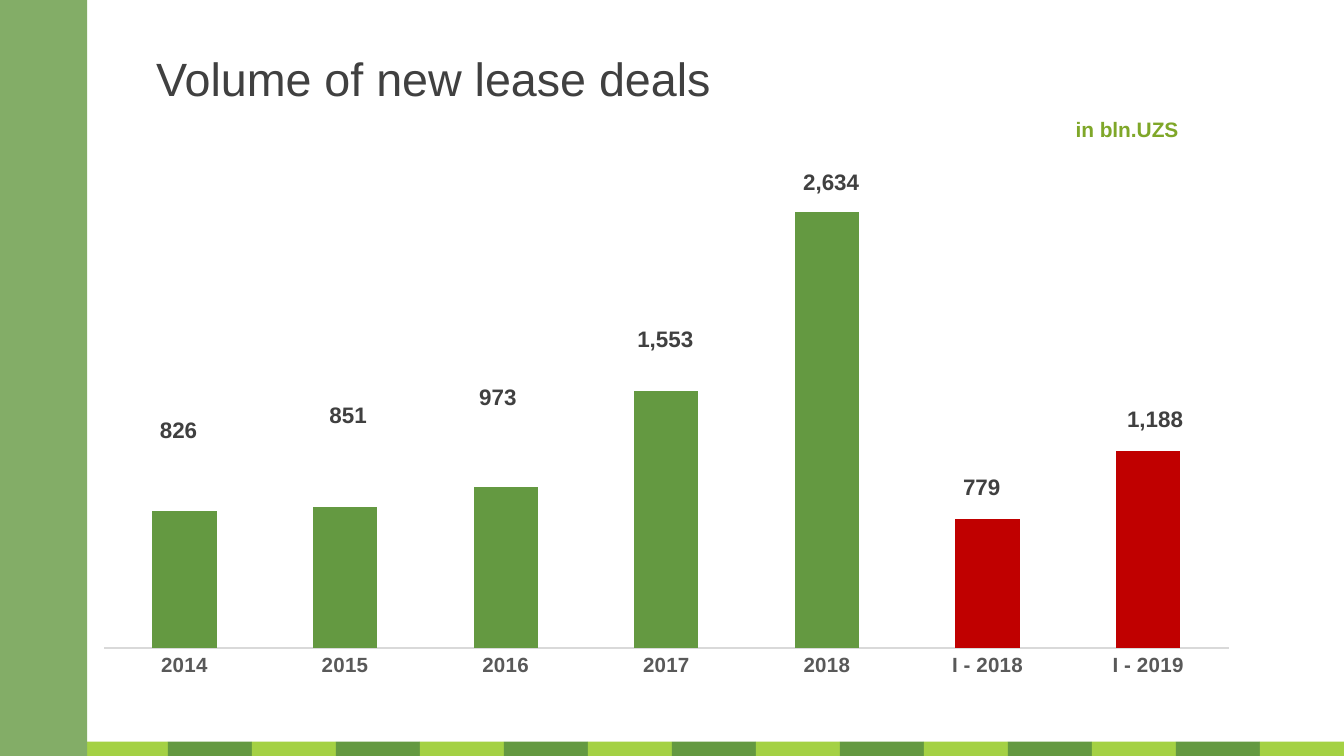
import pptx
import pptx.chart.data
import pptx.dml.color
import pptx.enum.chart
import pptx.enum.shapes
import pptx.enum.text
import pptx.oxml
import pptx.oxml.ns
import pptx.util
from pptx.util import Cm

TITLE = "Volume of new lease deals"
UNIT = "in bln.UZS"
# period, volume, bar colour, label shift from the bar's centre in cm (x, y)
DEALS = [
    ("2014", 826, "green", (-0.11, -2.82)),
    ("2015", 851, "green", (0.06, -3.06)),
    ("2016", 973, "green", (-0.15, -3.21)),
    ("2017", 1553, "green", (-0.02, -3.4)),
    ("2018", 2634, "green", (0.08, -4.67)),
    ("I - 2018", 779, "red", (-0.11, -1.81)),
    ("I - 2019", 1188, "red", (0.13, -2.45)),
]
THEME = {
    "font": "Arial",
    "colours": {
        "green": "649941", "lime": "A4D144", "sage": "83AD67", "red": "C00000",
        "unit": "7FA729", "dark": "404040", "axis text": "595959", "axis line": "D9D9D9",
    },
    "sizes": {"title": 25, "unit": 11.2, "axis": 11, "value": 12},
}
SLIDE_WIDTH, SLIDE_HEIGHT = 25.4, 14.29
SIDEBAR_WIDTH = 1.65
STRIPES, STRIPE_HEIGHT = 16, 0.27
CHART_LEFT, CHART_TOP, CHART_WIDTH, CHART_HEIGHT = 1.65, 2.87, 22.66, 10.67
PLOT_LEFT, PLOT_WIDTH, PLOT_HEIGHT = 0.32, 21.25, 9.38


def colour(name):
    return pptx.dml.color.RGBColor.from_string(THEME["colours"][name])


def style_font(font, size, colour_name, bold=True):
    font.name = THEME["font"]
    font.size = pptx.util.Pt(THEME["sizes"][size])
    font.bold = bold
    font.color.rgb = colour(colour_name)


def add_block(slide, left, top, width, height, fill):
    block = slide.shapes.add_shape(
        pptx.enum.shapes.MSO_SHAPE.RECTANGLE, Cm(left), Cm(top), Cm(width), Cm(height))
    block.shadow.inherit = False
    block.fill.solid()
    block.fill.fore_color.rgb = colour(fill)
    block.line.fill.background()


def add_caption(slide, text, left, top, width, height, size, colour_name, bold):
    frame = slide.shapes.add_textbox(Cm(left), Cm(top), Cm(width), Cm(height)).text_frame
    frame.word_wrap = True
    frame.margin_left = frame.margin_right = frame.margin_top = frame.margin_bottom = 0
    frame.vertical_anchor = pptx.enum.text.MSO_ANCHOR.MIDDLE
    paragraph = frame.paragraphs[0]
    paragraph.alignment = pptx.enum.text.PP_ALIGN.CENTER
    run = paragraph.add_run()
    run.text = text
    style_font(run.font, size, colour_name, bold)


def manual_layout(x, y, width=None, height=None):
    """Chart layout in cm: an inner plot area if sized, otherwise a label shift."""
    parts = [("x", x / CHART_WIDTH), ("y", y / CHART_HEIGHT)]
    modes = ""
    if width:
        parts += [("w", width / CHART_WIDTH), ("h", height / CHART_HEIGHT)]
        modes = '<c:layoutTarget val="inner"/><c:xMode val="edge"/><c:yMode val="edge"/>'
    values = "".join(f'<c:{tag} val="{value:.4f}"/>' for tag, value in parts)
    return pptx.oxml.parse_xml(
        f'<c:layout {pptx.oxml.ns.nsdecls("c")}><c:manualLayout>{modes}{values}'
        '</c:manualLayout></c:layout>')


def add_deals_chart(slide):
    periods, volumes, _, shifts = zip(*DEALS)
    data = pptx.chart.data.CategoryChartData(number_format="#,##0")
    data.categories = periods
    data.add_series("Series 1", volumes)
    chart = slide.shapes.add_chart(
        pptx.enum.chart.XL_CHART_TYPE.COLUMN_STACKED, Cm(CHART_LEFT), Cm(CHART_TOP),
        Cm(CHART_WIDTH), Cm(CHART_HEIGHT), data).chart
    chart.has_legend = chart.has_title = False
    chart.font.name = THEME["font"]

    value_axis = chart.value_axis
    value_axis.minimum_scale, value_axis.maximum_scale = 0, 3000
    value_axis.has_major_gridlines = False
    value_axis.visible = False

    period_axis = chart.category_axis
    period_axis.major_tick_mark = pptx.enum.chart.XL_TICK_MARK.NONE
    period_axis.format.line.color.rgb = colour("axis line")
    period_axis.format.line.width = pptx.util.Pt(0.75)
    style_font(period_axis.tick_labels.font, "axis", "axis text")

    plot = chart.plots[0]
    plot.gap_width, plot.overlap = 150, 100
    plot.vary_by_categories = False
    volume_series = plot.series[0]
    volume_series.format.fill.solid()
    volume_series.format.fill.fore_color.rgb = colour("green")
    labels = volume_series.data_labels
    labels.show_value = True
    labels.number_format = "#,##0"
    labels.number_format_is_linked = False
    style_font(labels.font, "value", "dark")

    for index, (_, _, fill, _) in enumerate(DEALS):
        point = volume_series.points[index]
        if fill != "green":
            point.format.fill.solid()
            point.format.fill.fore_color.rgb = colour(fill)
        point.data_label.position = pptx.enum.chart.XL_LABEL_POSITION.CENTER
        style_font(point.data_label.font, "value", "dark")

    chart_xml = chart.element
    for label, shift in zip(chart_xml.xpath(".//c:dLbl"), shifts):
        label.insert(1, manual_layout(*shift))
    for leader_lines in chart_xml.xpath(".//c:showLeaderLines"):
        leader_lines.set("val", "0")
    plot_area = chart_xml.xpath(".//c:plotArea")[0]
    for layout in plot_area.xpath("./c:layout"):
        plot_area.remove(layout)
    plot_area.insert(0, manual_layout(PLOT_LEFT, 0, PLOT_WIDTH, PLOT_HEIGHT))


def main():
    deck = pptx.Presentation()
    deck.slide_width, deck.slide_height = Cm(SLIDE_WIDTH), Cm(SLIDE_HEIGHT)
    slide = deck.slides.add_slide(deck.slide_layouts[6])

    stripe_width = SLIDE_WIDTH / STRIPES
    for index in range(STRIPES):
        add_block(slide, index * stripe_width, SLIDE_HEIGHT - STRIPE_HEIGHT,
                  stripe_width, STRIPE_HEIGHT, ("green", "lime")[index % 2])
    add_caption(slide, TITLE, 2.49, 0.87, 11.4, 1.19, "title", "dark", False)
    add_block(slide, 0, 0, SIDEBAR_WIDTH, SLIDE_HEIGHT, "sage")
    add_deals_chart(slide)
    add_caption(slide, UNIT, 19.71, 2.08, 3.18, 0.74, "unit", "unit", True)
    deck.save("out.pptx")


if __name__ == "__main__":
    main()
